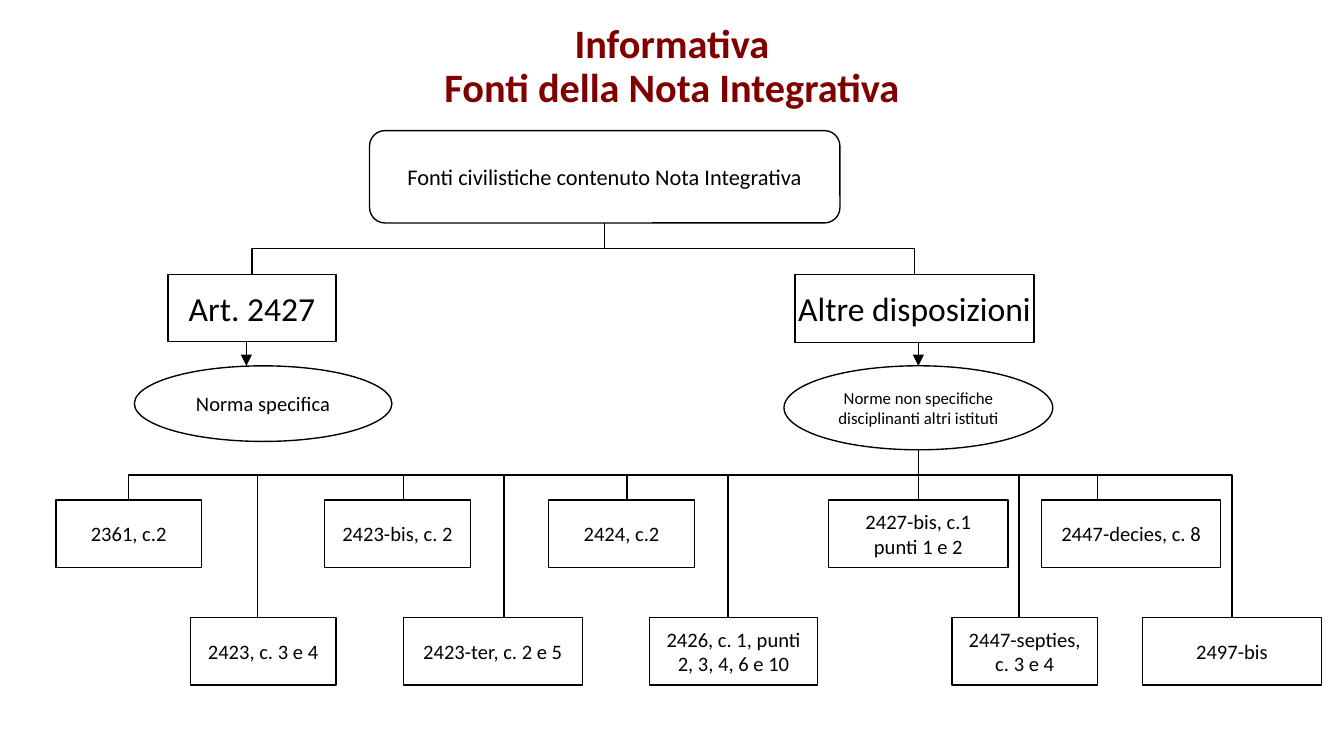
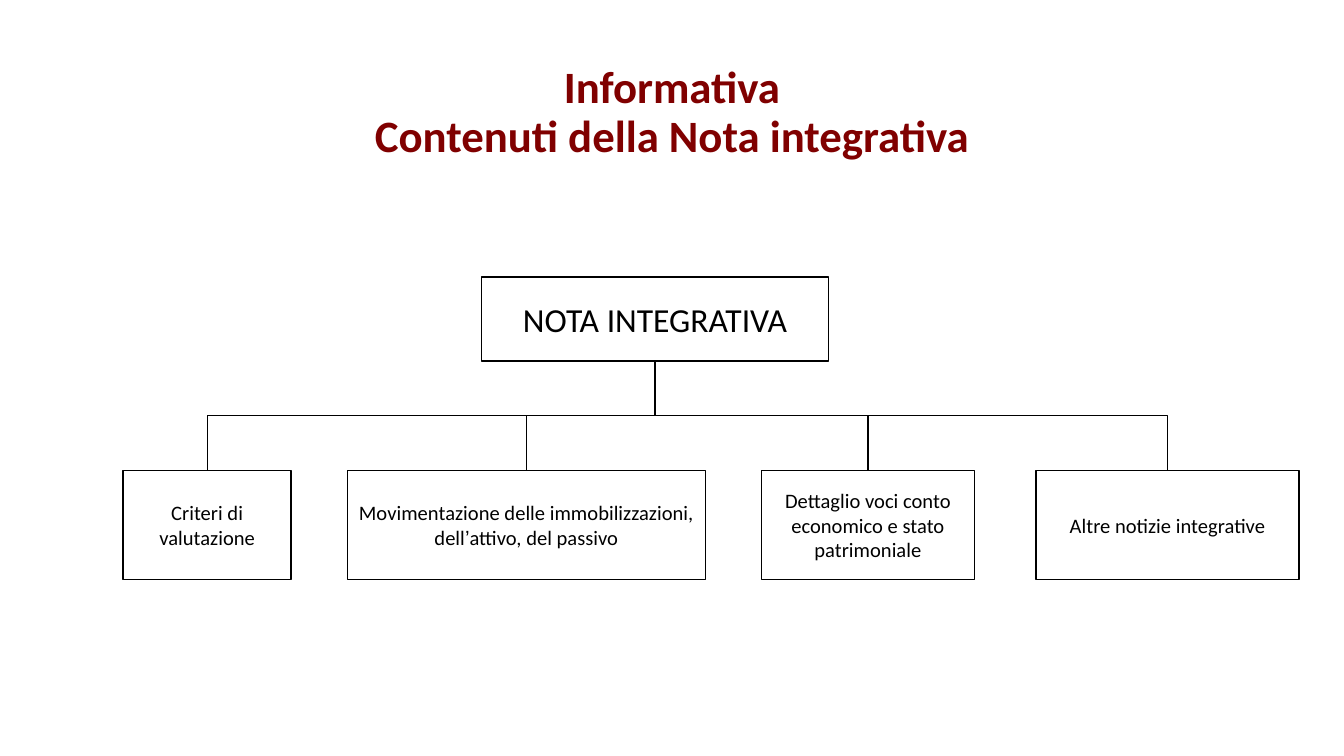
from copy import deepcopy
from dataclasses import dataclass

from pptx import Presentation
from pptx.dml.color import RGBColor
from pptx.enum.shapes import MSO_CONNECTOR as Link, MSO_SHAPE as Shape
from pptx.enum.text import MSO_ANCHOR as Anchor, MSO_AUTO_SIZE as AutoSize, PP_ALIGN as Align
from pptx.oxml.ns import qn
from pptx.util import Pt


@dataclass(frozen=True)
class Theme:
    title: RGBColor = RGBColor(0x80, 0, 0)
    ink: RGBColor = RGBColor(0, 0, 0)
    font: str = "Calibri"
    quote_font: str = "Arial"
    line: float = 0.75
    heading: float = 18
    lead: float = 12
    body: float = 11
    small: float = 9


@dataclass(frozen=True)
class Box:
    x: float
    y: float
    w: float
    h: float

    def at(self, dx, dy, w, h):
        return Box(self.x + dx, self.y + dy, w, h)

    @property
    def lengths(self):
        return Pt(self.x), Pt(self.y), Pt(self.w), Pt(self.h)

    @property
    def top(self):
        return self.x + self.w / 2, self.y

    @property
    def bottom(self):
        return self.x + self.w / 2, self.y + self.h


T = Theme()


def write(tf, text, *, size=T.body, color=T.ink, bold=False, wrap=True, spacing=None):
    tf.word_wrap = wrap
    tf.auto_size = AutoSize.NONE
    tf.vertical_anchor = Anchor.MIDDLE
    tf.margin_left = tf.margin_right = Pt(5.4)
    tf.margin_top = tf.margin_bottom = Pt(2.7)
    p = tf.paragraphs[0]
    p.alignment = Align.CENTER
    p.line_spacing = spacing
    for i, line in enumerate(text.split("\n")):
        if i:
            p.add_line_break()
        for part in line.replace("’", "|’|").split("|"):
            r = p.add_run()
            r.text = part
            r.font.name = T.quote_font if part == "’" else T.font
            r.font.size = Pt(size)
            r.font.bold = bold
            r.font.color.rgb = color
    for br in p._p.findall(qn("a:br")):
        br.append(deepcopy(p.runs[0]._r.rPr))


def node(s, box, text, kind=Shape.RECTANGLE, **style):
    sp = s.shapes.add_shape(kind, *box.lengths)
    sp.shadow.inherit = False
    sp.fill.background()
    sp.line.color.rgb = T.ink
    sp.line.width = Pt(T.line)
    write(sp.text_frame, text, **style)
    return box


def link(s, start, end, kind=Link.STRAIGHT, arrow=False):
    c = s.shapes.add_connector(kind, *map(Pt, (*start, *end)))
    c.line.color.rgb = T.ink
    c.line.width = Pt(T.line)
    spPr = c._element.spPr
    spPr.append(spPr.makeelement(qn("a:effectLst"), {}))
    if arrow:
        ln = c.line._get_or_add_ln()
        ln.append(ln.makeelement(qn("a:tailEnd"), {"type": "triangle"}))
    return c


def elbow(s, start, end, bend=0.5):
    (x1, y1), (x2, y2) = start, end
    w, h = y2 - y1, abs(x2 - x1)
    x, y = (x1 + x2 - w) / 2, (y1 + y2 - h) / 2
    c = link(s, (x, y), (x + w, y + h), Link.ELBOW)
    xfrm = c._element.spPr.find(qn("a:xfrm"))
    if x2 < x1:
        xfrm.set("rot", "5400000")
    else:
        xfrm.set("rot", "16200000")
        xfrm.set("flipH", "1")
    av = c._element.spPr.find(qn("a:prstGeom")).get_or_add_avLst()
    av.append(av.makeelement(qn("a:gd"), {"name": "adj1", "fmla": f"val {round(bend * 100000)}"}))


def titled_slide(prs, box, text, size):
    s = prs.slides.add_slide(prs.slide_layouts[5])
    title = s.shapes.title
    title.left, title.top, title.width, title.height = box.lengths
    write(title.text_frame, text, size=size, color=T.title, bold=True, spacing=0.9)
    return s


def source_tree(s, box):
    root = node(s, box.at(126, 0, 252, 49.5), "Fonti civilistiche contenuto Nota Integrativa",
                Shape.ROUNDED_RECTANGLE, size=T.lead)
    article = node(s, box.at(18, 77, 90, 36), "Art. 2427", size=T.heading, wrap=False)
    others = node(s, box.at(354, 77, 128, 36.5), "Altre disposizioni", size=T.heading, wrap=False)
    node(s, box.at(0, 126, 138, 40.5), "Norma specifica", Shape.OVAL, wrap=False)
    node(s, box.at(348, 126, 144, 45), "Norme non specifiche disciplinanti altri istituti",
         Shape.OVAL, size=T.small)
    for child in (article, others):
        elbow(s, root.bottom, child.top)
    for dx in (60, 420):
        x = box.x + dx
        link(s, (x, box.y + 113), (x, box.y + 126), arrow=True)


def article_rows(s, box):
    upper = [
        (0, 78, 39, "2361, c.2", False),
        (144, 78, 186, "2423-bis, c. 2", False),
        (264, 78, 306, "2424, c.2", False),
        (414, 96, 462, "2427-bis, c.1\npunti 1 e 2", True),
        (528, 96, 558, "2447-decies, c. 8", False),
    ]
    lower = [
        (72, 78, 108, "2423, c. 3 e 4", False),
        (186, 96, 240, "2423-ter, c. 2 e 5", False),
        (318, 90, 360, "2426, c. 1, punti 2, 3, 4, 6 e 10", True),
        (480, 78, 516, "2447-septies, c. 3 e 4", True),
        (582, 96, 630, "2497-bis", False),
    ]
    bus, height = 13.5, 36
    start = (box.x + 462, box.y)
    for row, dy in ((upper, 27), (lower, box.h - height)):
        for dx, w, drop, text, wrap in row:
            node(s, box.at(dx, dy, w, height), text, wrap=wrap)
            x, y = box.x + drop, box.y + dy
            if drop in (39, 630):
                elbow(s, start, (x, y), bus / dy)
            else:
                link(s, (x, box.y + bus), (x, y))


def content_tree(s, box):
    root = node(s, box.at(192, 0, 186, 45), "NOTA INTEGRATIVA", size=T.heading, wrap=False)
    children = [
        (0, 90, "Criteri di valutazione", True),
        (120, 192, "Movimentazione delle immobilizzazioni, dell’attivo, del passivo", True),
        (342, 114, "Dettaglio voci conto economico e stato patrimoniale", True),
        (489, 141, "Altre notizie integrative", False),
    ]
    height = 58.5
    for dx, w, text, wrap in children:
        child = node(s, box.at(dx, box.h - height, w, height), text, wrap=wrap)
        elbow(s, root.bottom, child.top)


def main():
    prs = Presentation()
    prs.slide_width, prs.slide_height = Pt(720), Pt(405)

    s = titled_slide(prs, Box(54, 13.5, 612, 45), "Informativa\nFonti della Nota Integrativa", 21.6)
    source_tree(s, Box(72, 70, 492, 171))
    article_rows(s, Box(30, 241, 678, 126))

    s = titled_slide(prs, Box(49.5, 21.5, 621, 78.5),
                     "Informativa\nContenuti della Nota integrativa", 24)
    content_tree(s, Box(66, 148.5, 630, 162))

    prs.save("out.pptx")


if __name__ == "__main__":
    main()
